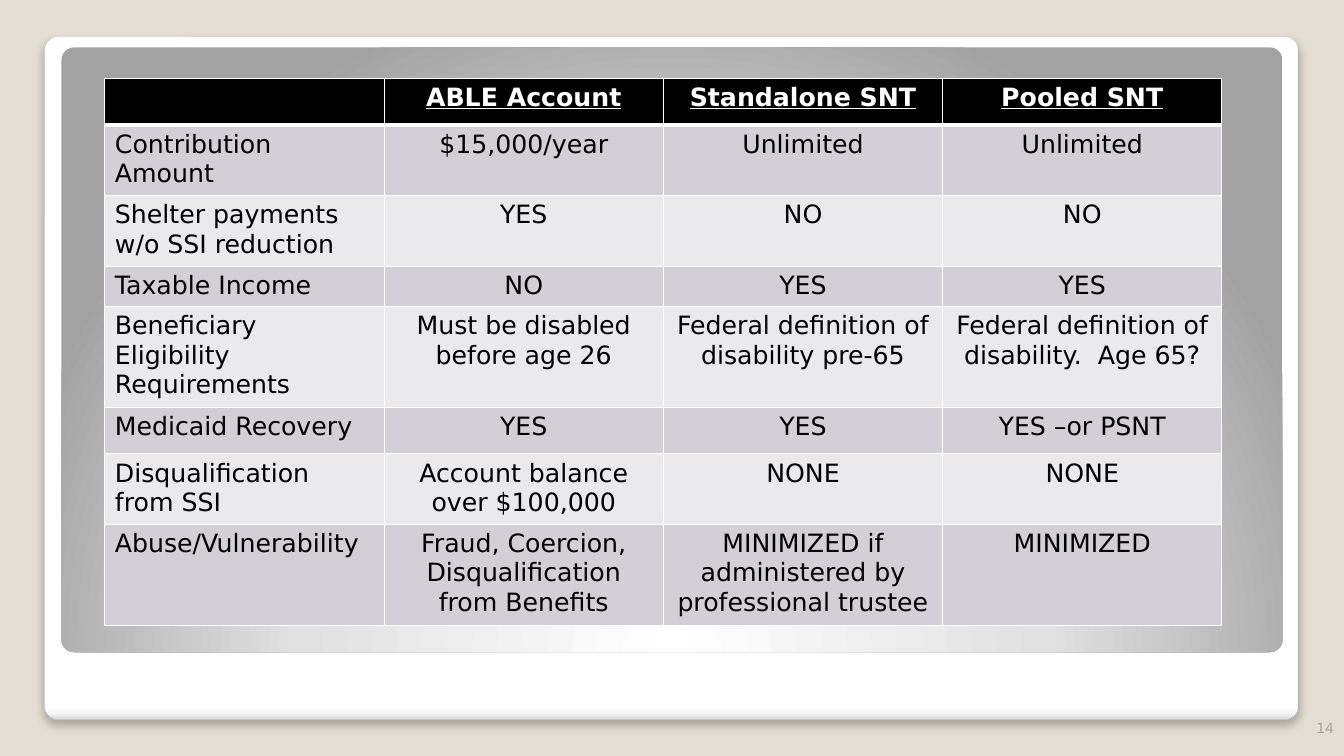
from lxml import etree
from pptx import Presentation, util as u
from pptx.dml.color import RGBColor
from pptx.enum import shapes, text
from pptx.oxml import ns

HEAD = ["", "ABLE Account", "Standalone SNT", "Pooled SNT"]
BODY = [
    ["Contribution Amount", "$15,000/year", "Unlimited", "Unlimited"],
    ["Shelter payments w/o SSI reduction", "YES", "NO", "NO"],
    ["Taxable Income", "NO", "YES", "YES"],
    ["Beneficiary Eligibility Requirements", "Must be disabled before age 26",
     "Federal definition of disability pre-65",
     "Federal definition of disability.  Age 65?"],
    ["Medicaid Recovery", "YES", "YES", "YES –or PSNT"],
    ["Disqualification from SSI", "Account balance over $100,000", "NONE", "NONE"],
    ["Abuse/Vulnerability", "Fraud, Coercion, Disqualification from Benefits",
     "MINIMIZED if administered by professional trustee", "MINIMIZED"],
]
PAGE = "14"

WIDE, HIGH = 13.33, 7.5
COL = 2.77
ROWS = [0.46, 0.66, 0.66, 0.38, 0.94, 0.46, 0.66, 0.94]
CARD = (0.44, 0.36, 12.44, 6.78)
PANEL = (0.61, 0.47, 12.11, 6)
GRID = (1.04, 0.78, COL * len(HEAD), sum(ROWS))
FOOT = (WIDE - 2, 6.95, 2, 0.4)

SAND = RGBColor(0xE3, 0xDE, 0xD1)
EDGE = RGBColor(0xA4, 0xA4, 0xA4)
MUTED = RGBColor(0xA8, 0xA4, 0x9B)
BLACK = RGBColor(0, 0, 0)
WHITE = RGBColor(255, 255, 255)
BANDS = [RGBColor(0xD2, 0xCF, 0xD6), RGBColor(0xEA, 0xE9, 0xEC)]

CARD_STOPS = [(0, "FFFFFF"), (98, "FFFFFF"), (99, "F7F7F7"), (100, "DADADA")]
PANEL_STOPS = [(0, "FFFFFF"), (55, "E1E1E1"), (100, "A2A2A2")]
DOWN = '<a:lin ang="5400000" scaled="0"/>'
GLOW = ('<a:path path="circle">'
        '<a:fillToRect l="50000" t="175000" r="50000" b="-75000"/></a:path>')
SHADE = ('<a:outerShdw blurRad="76200" dist="50800" dir="5400000" algn="tl" '
         'rotWithShape="0"><a:srgbClr val="000000"><a:alpha val="25000"/>'
         '</a:srgbClr></a:outerShdw>')

BASE = dict(name="DejaVu Sans", size=u.Pt(18), color=BLACK, bold=False, underline=False)
TITLE = BASE | dict(color=WHITE, bold=True, underline=True)
SMALL = BASE | dict(size=u.Pt(10), color=MUTED)


def inches(box):
    return [u.Inches(n) for n in box]


def xml(tag, inner, attrs=""):
    return etree.fromstring(f'<a:{tag} {ns.nsdecls("a")} {attrs}>{inner}</a:{tag}>')


def write(frame, words, align, style):
    par = frame.paragraphs[0]
    par.alignment = align
    run = par.add_run()
    run.text = words
    for key, value in style.items():
        if key == "color":
            run.font.color.rgb = value
        else:
            setattr(run.font, key, value)


def add_plate(slide, box, stops, path, effect=""):
    """Add a rounded plate with a gradient and an optional shadow."""
    plate = slide.shapes.add_shape(shapes.MSO_SHAPE.ROUNDED_RECTANGLE, *inches(box))
    plate.adjustments[0] = 0.021
    plate.line.fill.background()
    marks = "".join(f'<a:gs pos="{pos * 1000}"><a:srgbClr val="{hue}"/></a:gs>'
                    for pos, hue in stops)
    props = plate._element.spPr
    props.find(ns.qn("a:prstGeom")).addnext(
        xml("gradFill", f"<a:gsLst>{marks}</a:gsLst>{path}", 'rotWithShape="1"'))
    props.append(xml("effectLst", effect))
    return plate


def edge_cell(cell, base):
    """Draw white cell borders; base is the bottom width in points."""
    sides = zip("LRTB", (1, 1, 1, base))
    for spot, (side, width) in enumerate(sides):
        line = xml(f"ln{side}",
                   f'<a:solidFill><a:srgbClr val="{WHITE}"/></a:solidFill>',
                   f'w="{int(u.Pt(width))}"')
        cell._tc.get_or_add_tcPr().insert(spot, line)


def add_grid(slide):
    rows = [HEAD] + BODY
    table = slide.shapes.add_table(len(rows), len(HEAD), *inches(GRID)).table
    for col in table.columns:
        col.width = u.Inches(COL)
    for r, (row, high) in enumerate(zip(rows, ROWS)):
        table.rows[r].height = u.Inches(high)
        for c, words in enumerate(row):
            cell = table.cell(r, c)
            cell.fill.solid()
            cell.fill.fore_color.rgb = BANDS[(r - 1) % 2] if r else BLACK
            edge_cell(cell, 1 if r else 3)
            if words:
                align = text.PP_ALIGN.CENTER if c else text.PP_ALIGN.LEFT
                write(cell.text_frame, words, align, BASE if r else TITLE)


def main():
    deck = Presentation()
    deck.slide_width, deck.slide_height = inches((WIDE, HIGH))
    slide = deck.slides.add_slide(deck.slide_layouts[6])
    slide.background.fill.solid()
    slide.background.fill.fore_color.rgb = SAND

    card = add_plate(slide, CARD, CARD_STOPS, DOWN, SHADE)
    card.line.color.rgb = EDGE
    card.line.width = u.Pt(0.16)
    add_plate(slide, PANEL, PANEL_STOPS, GLOW)

    frame = slide.shapes.add_textbox(*inches(FOOT)).text_frame
    frame.word_wrap = True
    frame.vertical_anchor = text.MSO_ANCHOR.BOTTOM
    write(frame, PAGE, text.PP_ALIGN.RIGHT, SMALL)
    add_grid(slide)
    deck.save("out.pptx")


if __name__ == "__main__":
    main()
